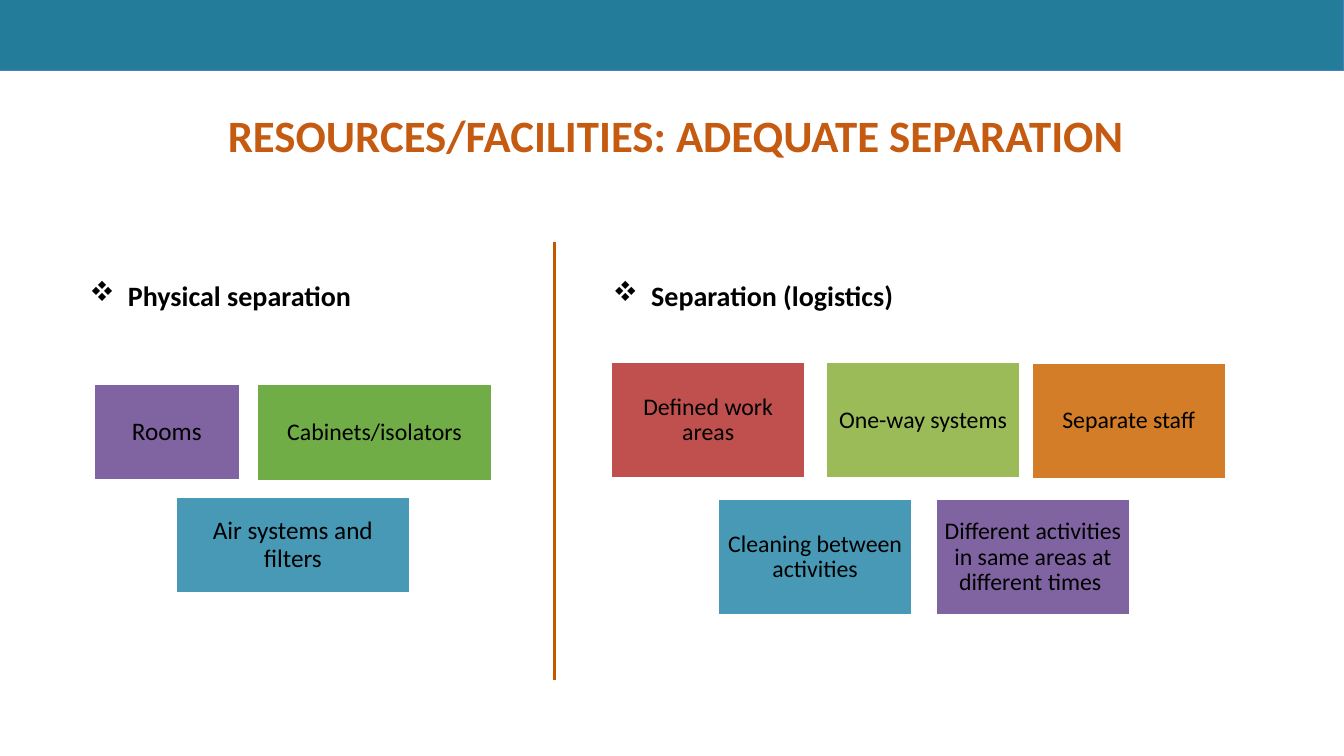
from dataclasses import dataclass

from lxml import etree
from pptx import Presentation
from pptx.dml.color import RGBColor
from pptx.enum.shapes import MSO_CONNECTOR, MSO_SHAPE
from pptx.enum.text import MSO_ANCHOR, MSO_AUTO_SIZE, PP_ALIGN
from pptx.oxml.ns import qn
from pptx.util import Emu, Pt

RECTANGLE = MSO_SHAPE.RECTANGLE
STRAIGHT = MSO_CONNECTOR.STRAIGHT
TOP, MIDDLE = MSO_ANCHOR.TOP, MSO_ANCHOR.MIDDLE
CENTER = PP_ALIGN.CENTER
NO_AUTOSIZE = MSO_AUTO_SIZE.NONE

EMU_PER_PX = 9144  # 100 px to the inch
TITLE_ONLY = 5
FONT = "Calibri"
BLACK, WHITE = "000000", "FFFFFF"
PURPLE, BLUE = "8064A2", "4799B5"


@dataclass
class Heading:
    text: str
    left: int
    width: int
    height: int


@dataclass
class Tile:
    text: str
    left: int
    top: int
    width: int
    height: int
    fill: str
    size: int = 17
    border: float = 2


HEADING_TOP = 271
HEADINGS = [
    Heading("Physical separation", 79, 369, 236),
    Heading("Separation (logistics)", 598, 618, 376),
]
TILES = [
    # Physical separation
    Tile("Rooms", 93, 381, 145, 96, PURPLE, size=18),
    Tile("Cabinets/isolators", 255, 381, 233, 96, "70AD47", border=1),
    Tile("Air systems and filters", 174, 493, 233, 96, BLUE, size=18),
    # Separation by logistics
    Tile("Defined work areas", 606, 359, 193, 116, "C0504D"),
    Tile("One-way systems", 819, 359, 193, 116, "9BBB59"),
    Tile("Different activities in same areas at different times ",
         928, 495, 193, 116, PURPLE),
    Tile("Cleaning between activities", 712, 495, 193, 116, BLUE),
    Tile("Separate staff", 1023, 360, 193, 116, "D37D28"),
]


def px(length: int) -> Emu:
    return Emu(length * EMU_PER_PX)


def color(value: str) -> RGBColor:
    return RGBColor.from_string(value)


def set_font(paragraph, size: int, hex_color: str, bold: bool = False) -> None:
    font = paragraph.font
    font.name, font.size, font.bold = FONT, Pt(size), bold
    font.color.rgb = color(hex_color)


def set_frame(frame, anchor, left: int, top: int, right: int, bottom: int) -> None:
    frame.word_wrap = True
    frame.auto_size = NO_AUTOSIZE
    frame.vertical_anchor = anchor
    frame.margin_left, frame.margin_top = px(left), px(top)
    frame.margin_right, frame.margin_bottom = px(right), px(bottom)


def add_rectangle(slide, left: int, top: int, width: int, height: int,
                  fill: str, line: str, line_width: float):
    box = slide.shapes.add_shape(RECTANGLE, px(left), px(top), px(width), px(height))
    box.shadow.inherit = False
    box.fill.solid()
    box.fill.fore_color.rgb = color(fill)
    box.line.color.rgb = color(line)
    box.line.width = Pt(line_width)
    return box


def add_title(slide, text: str) -> None:
    title = slide.shapes.title
    title.left, title.top = px(18), px(102)
    title.width, title.height = px(1315), px(64)
    set_frame(title.text_frame, TOP, 10, 5, 10, 0)
    title.text_frame.text = text
    para = title.text_frame.paragraphs[0]
    para.alignment = CENTER
    set_font(para, 32, "C55A11", bold=True)


def add_heading(slide, heading: Heading) -> None:
    box = slide.shapes.add_textbox(px(heading.left), px(HEADING_TOP),
                                   px(heading.width), px(heading.height))
    set_frame(box.text_frame, TOP, 10, 5, 10, 5)
    para = box.text_frame.paragraphs[0]
    para.text = heading.text
    # Hanging bullet
    properties = para._p.get_or_add_pPr()
    properties.set("marL", str(px(38)))
    properties.set("indent", str(px(-38)))
    etree.SubElement(properties, qn("a:buFont")).set("typeface", "Wingdings")
    etree.SubElement(properties, qn("a:buChar")).set("char", "v")
    set_font(para, 20, BLACK, bold=True)


def add_tile(slide, tile: Tile) -> None:
    box = add_rectangle(slide, tile.left, tile.top, tile.width, tile.height,
                        tile.fill, WHITE, tile.border)
    set_frame(box.text_frame, MIDDLE, 7, 7, 7, 7)
    para = box.text_frame.paragraphs[0]
    para.text = tile.text
    para.alignment = CENTER
    para.line_spacing = 0.9
    set_font(para, tile.size, BLACK)


def add_divider(slide) -> None:
    divider = slide.shapes.add_connector(STRAIGHT, px(550), px(675), px(550), px(240))
    divider.line.color.rgb = color("C25700")
    divider.line.width = Pt(2.25)
    etree.SubElement(divider._element.spPr, qn("a:effectLst"))


def main() -> None:
    deck = Presentation()
    deck.slide_width, deck.slide_height = px(1333), px(750)
    page = deck.slides.add_slide(deck.slide_layouts[TITLE_ONLY])

    # Band and title
    add_rectangle(page, 0, 0, 1333, 70, "237C9A", "4B7EBC", 0.75)
    add_title(page, "RESOURCES/FACILITIES: ADEQUATE SEPARATION ")

    # Two columns and the line between them
    for heading in HEADINGS:
        add_heading(page, heading)
    for tile in TILES:
        add_tile(page, tile)
    add_divider(page)

    deck.save("out.pptx")


if __name__ == "__main__":
    main()
